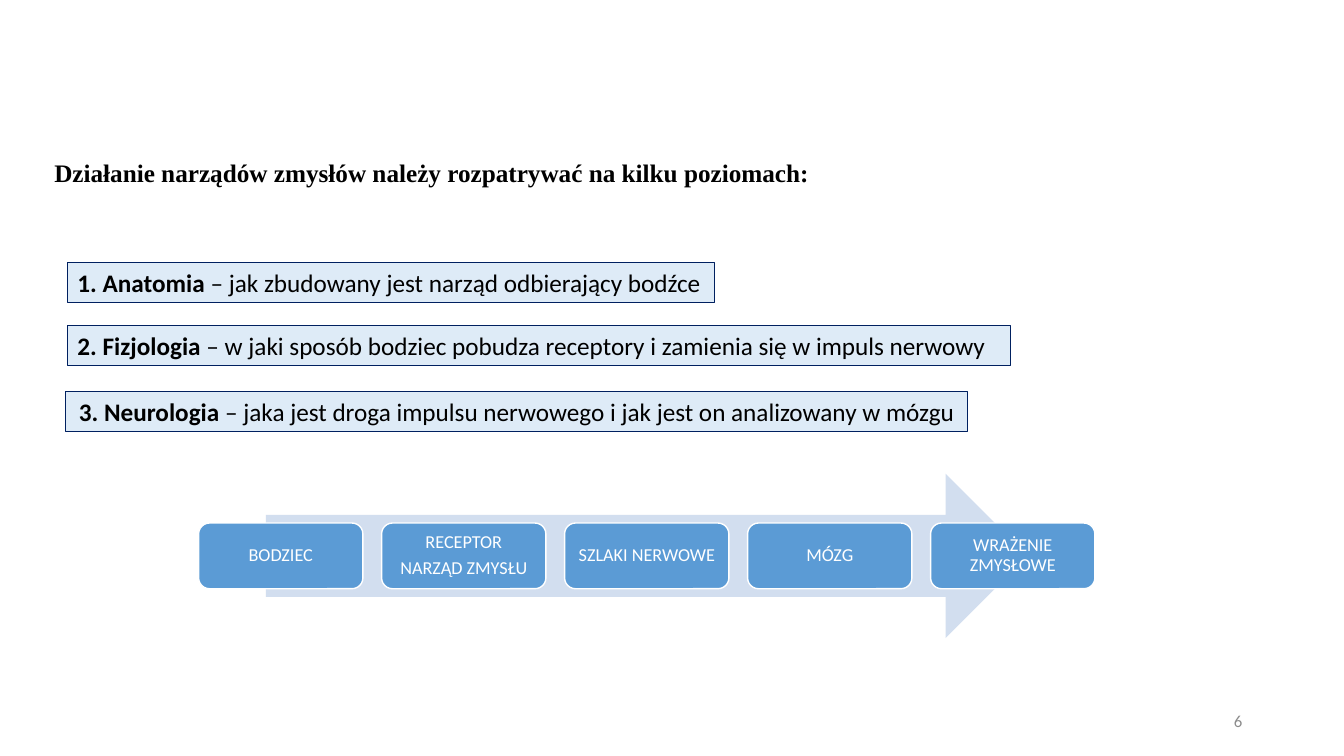
from pptx import Presentation
from pptx.dml.color import RGBColor
from pptx.enum.shapes import MSO_SHAPE as Shape
from pptx.enum.text import MSO_ANCHOR as Anchor, PP_ALIGN as Align
from pptx.util import Inches, Pt

LEVELS = [
    ("1. Anatomia ", "– jak zbudowany jest narząd odbierający bodźce",
     (0.67, 2.6, 6.42, 0.4), Align.LEFT),
    ("2. Fizjologia ", "– w jaki sposób bodziec pobudza receptory i zamienia się w impuls nerwowy",
     (0.67, 3.23, 9.35, 0.4), Align.LEFT),
    ("3. Neurologia ", "– jaka jest droga impulsu nerwowego i jak jest on analizowany w mózgu",
     (0.65, 3.88, 8.95, 0.4), Align.CENTER),
]
STAGES = [["BODZIEC"], ["RECEPTOR", "NARZĄD ZMYSŁU"], ["SZLAKI NERWOWE"],
          ["MÓZG"], ["WRAŻENIE ZMYSŁOWE"]]


def color(value):
    return RGBColor.from_string(value)


def style(para, size, ink, align, font="Calibri", bold=None):
    para.alignment = align
    para.font.name = font
    para.font.size = Pt(size)
    para.font.color.rgb = color(ink)
    para.font.bold = bold


def add_box(page, kind, box, fill, line=None, width=1):
    shape = page.shapes.add_shape(kind, *map(Inches, box))
    shape.shadow.inherit = False
    shape.fill.solid()
    shape.fill.fore_color.rgb = color(fill)
    if line:
        shape.line.color.rgb = color(line)
        shape.line.width = Pt(width)
    else:
        shape.line.fill.background()
    return shape


def add_label(page, box, text, size, ink, align, **font):
    frame = page.shapes.add_textbox(*map(Inches, box)).text_frame
    frame.word_wrap = True
    frame.vertical_anchor = Anchor.MIDDLE
    para = frame.paragraphs[0]
    para.text = text
    style(para, size, ink, align, **font)


def add_level(page, box, term, meaning, align):
    frame = add_box(page, Shape.RECTANGLE, box, "DEEBF7", "002060", 0.75).text_frame
    frame.word_wrap = True
    para = frame.paragraphs[0]
    style(para, 18, "000000", align)
    for text, bold in ((term, True), (meaning, False)):
        span = para.add_run()
        span.text = text
        span.font.bold = bold


def add_stage(page, box, lines):
    frame = add_box(page, Shape.ROUNDED_RECTANGLE, box, "5B9BD5", "FFFFFF").text_frame
    frame.word_wrap = True
    frame.vertical_anchor = Anchor.MIDDLE
    frame.margin_left = frame.margin_right = Inches(0.08)
    frame.margin_top = frame.margin_bottom = Inches(0.08)
    frame.text = "\n".join(lines)
    for para in frame.paragraphs:
        style(para, 13, "FFFFFF", Align.CENTER)
        para.line_spacing = 0.9
        para.space_after = Pt(4.5)


def add_process(page, box):
    """Equal stages across the box, over an arrow spanning its full height."""
    left, top, width, height = box
    arrow_width = width * 0.85
    add_box(page, Shape.RIGHT_ARROW,
            (left + (width - arrow_width) / 2, top, arrow_width, height), "D2DEEF")
    stage_width, stage_height = 1.63, height * 0.4
    step = (width - stage_width) / (len(STAGES) - 1)
    for index, lines in enumerate(STAGES):
        add_stage(page, (left + index * step, top + (height - stage_height) / 2,
                         stage_width, stage_height), lines)


def main():
    deck = Presentation()
    deck.slide_width, deck.slide_height = Inches(13.33), Inches(7.5)
    page = deck.slides.add_slide(deck.slide_layouts[6])
    add_label(page, (0.44, 1.46, 12.4, 0.5),
              "Działanie narządów zmysłów należy rozpatrywać na kilku poziomach:",
              18, "000000", Align.LEFT, font="Times New Roman", bold=True)
    for term, meaning, box, align in LEVELS:
        add_level(page, box, term, meaning, align)
    add_process(page, (1.97, 4.7, 8.89, 1.63))
    add_label(page, (9.42, 6.95, 3, 0.4), "6", 12, "8C8C8C", Align.RIGHT)
    deck.save("out.pptx")


if __name__ == "__main__":
    main()
